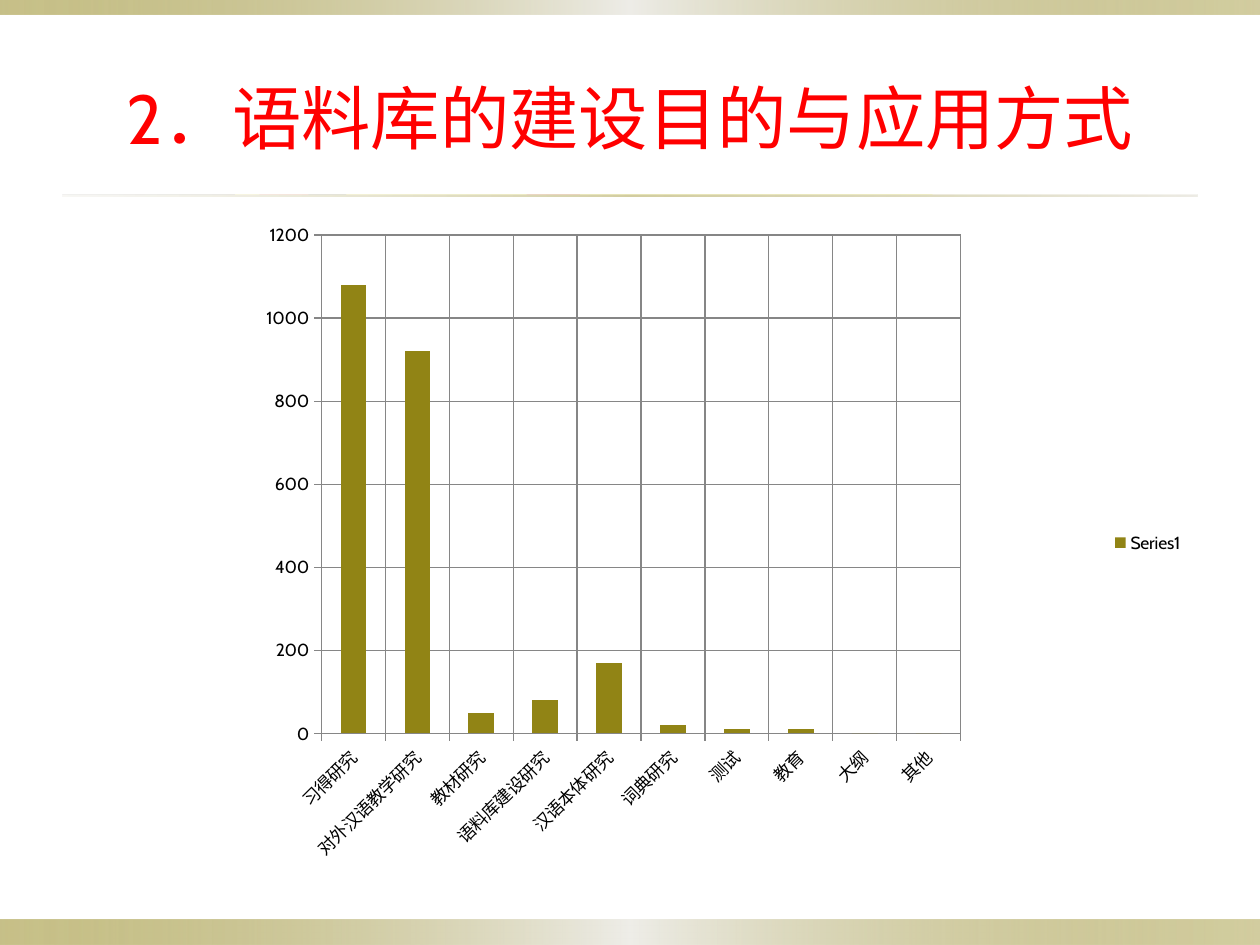
from lxml import etree
from pptx import Presentation
from pptx.chart.data import CategoryChartData
from pptx.dml.color import RGBColor
from pptx.enum import chart as charts, shapes, text
from pptx.oxml import parse_xml
from pptx.oxml.ns import nsdecls, qn
from pptx.util import Cm, Pt

OLIVE = RGBColor(0x91, 0x84, 0x15)
PALE = RGBColor(0xEE, 0xED, 0xE8)
SAND = RGBColor(0xDC, 0xD9, 0xCC)
RED = RGBColor(0xFF, 0x00, 0x00)
BLACK = RGBColor(0x00, 0x00, 0x00)
GREY = RGBColor(0x86, 0x86, 0x86)
FONT = "Cabin"


def add_band(page, top, height, left, width, stops):
    """Add a horizontal bar with a gradient of (position, colour, opacity) in percent."""
    band = page.shapes.add_shape(
        shapes.MSO_SHAPE.RECTANGLE, Cm(left), Cm(top), Cm(width), Cm(height))
    band.shadow.inherit = False
    band.line.fill.background()
    band.fill.gradient()
    band.fill.gradient_angle = 0
    stop_list = band.fill._fill._gradFill.find(qn("a:gsLst"))
    for stop in list(stop_list):
        stop_list.remove(stop)
    for position, colour, opacity in stops:
        stop = etree.SubElement(stop_list, qn("a:gs"), pos=str(position * 1000))
        shade = etree.SubElement(stop, qn("a:srgbClr"), val=str(colour))
        etree.SubElement(shade, qn("a:alpha"), val=str(opacity * 1000))


deck = Presentation()
deck.slide_width, deck.slide_height = Cm(25.4), Cm(19.05)
page = deck.slides.add_slide(deck.slide_layouts[5])

# Edge bands and the rule under the title
edge_stops = [(0, OLIVE, 50), (50, PALE, 100), (100, OLIVE, 40)]
rule_stops = [(0, SAND, 20), (50, OLIVE, 40), (100, SAND, 50)]
add_band(page, 18.54, 0.51, 0, 25.4, edge_stops)
add_band(page, 0, 0.3, 0, 25.4, edge_stops)
add_band(page, 3.92, 0.04, 1.27, 22.86, rule_stops)

# Title
title = page.shapes.title
title.left, title.top, title.width, title.height = Cm(1.27), Cm(0.76), Cm(22.86), Cm(3.18)
title.text_frame.vertical_anchor = text.MSO_ANCHOR.MIDDLE
para = title.text_frame.paragraphs[0]
para.alignment = text.PP_ALIGN.CENTER
span = para.add_run()
span.text = "2．语料库的建设目的与应用方式"
span.font.name = FONT
span.font.size = Pt(39.6)
span.font.color.rgb = RED

# Column chart
purposes = {
    "习得研究": 1080, "对外汉语教学研究": 920, "教材研究": 50, "语料库建设研究": 80,
    "汉语本体研究": 170, "词典研究": 20, "测试": 10, "教育": 10, "大纲": 0, "其他": 0,
}
data = CategoryChartData()
data.categories = list(purposes)
data.add_series("Series1", list(purposes.values()))
chart = page.shapes.add_chart(
    charts.XL_CHART_TYPE.COLUMN_CLUSTERED,
    Cm(1.27), Cm(4.44), Cm(22.85), Cm(13), data).chart
chart.has_title = False
chart.font.name = FONT
chart.font.size = Pt(10)
chart.font.color.rgb = BLACK
chart.has_legend = True
chart.legend.position = charts.XL_LEGEND_POSITION.RIGHT
chart.legend.include_in_layout = False

plot = chart.plots[0]
plot.gap_width = 150
plot.vary_by_categories = False
columns = plot.series[0]
columns.format.fill.solid()
columns.format.fill.fore_color.rgb = OLIVE

# Axes and grid
for axis in (chart.category_axis, chart.value_axis):
    axis.has_major_gridlines = True
    axis.major_tick_mark = charts.XL_TICK_MARK.OUTSIDE
    axis.minor_tick_mark = charts.XL_TICK_MARK.NONE
    for line in (axis.format.line, axis.major_gridlines.format.line):
        line.color.rgb = GREY
        line.width = Pt(0.75)
    axis.tick_labels.font.name = FONT
    axis.tick_labels.font.size = Pt(10)
    axis.tick_labels.font.color.rgb = BLACK
chart.value_axis.minimum_scale = 0
chart.value_axis.maximum_scale = 1200
chart.value_axis.major_unit = 200
label_body = chart.category_axis._element.find(qn("c:txPr")).find(qn("a:bodyPr"))
label_body.set("rot", str(-45 * 60000))
label_body.set("vert", "horz")

# Fixed inner plot area, in shares of the chart
plot_area = chart._chartSpace.chart.plotArea
for layout in plot_area.findall(qn("c:layout")):
    plot_area.remove(layout)
layout = parse_xml(f"<c:layout {nsdecls('c')}><c:manualLayout/></c:layout>")
settings = {"layoutTarget": "inner", "xMode": "edge", "yMode": "edge",
            "x": 0.228, "y": 0.023, "w": 0.564, "h": 0.773}
for name, value in settings.items():
    etree.SubElement(layout[0], qn(f"c:{name}"), val=str(value))
plot_area.insert(0, layout)

deck.save("out.pptx")
